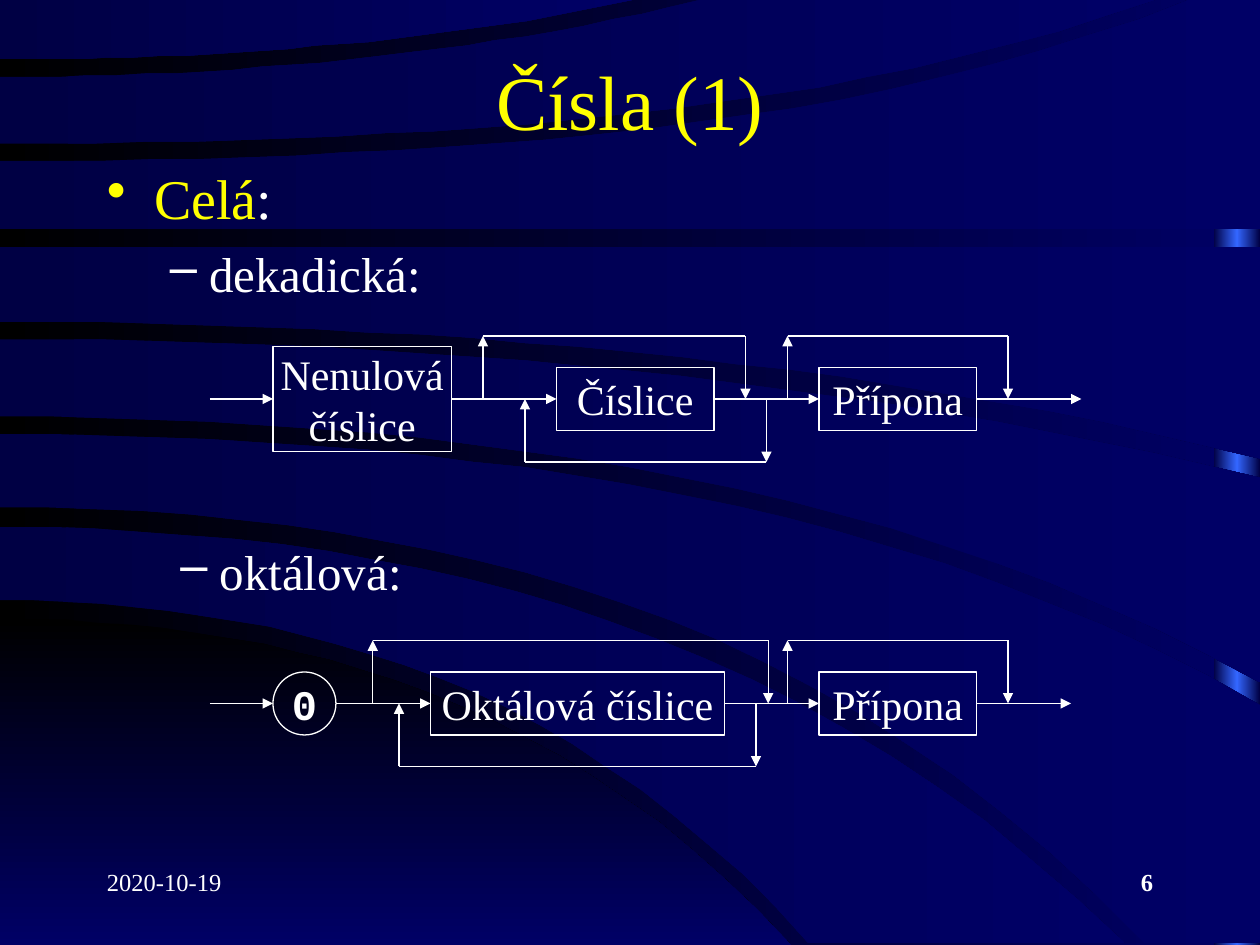
from copy import deepcopy
from typing import NamedTuple, Optional

from lxml.etree import SubElement
from pptx import Presentation
from pptx.dml.color import RGBColor
from pptx.enum.shapes import MSO_CONNECTOR, MSO_SHAPE
from pptx.enum.text import MSO_ANCHOR, PP_ALIGN
from pptx.oxml.ns import qn
from pptx.util import Pt

COLORS = {"text": "FFFFFF", "accent": "FFFF00", "black": "000000",
          "navy": "000066", "dark": "000044", "glow": "3366FF"}
SERIF = "Times New Roman"
DETOUR_HEIGHT = 36
CURVE_STEPS = 24


class Run(NamedTuple):
    text: str
    size: float
    color: str = "text"
    bold: bool = False
    font: str = SERIF


class Line(NamedTuple):
    runs: list
    align: PP_ALIGN = PP_ALIGN.LEFT
    bullet: str = ""
    margin: float = 0
    hanging: float = 0
    space_before: float = 0


class TextBox(NamedTuple):
    left: float
    top: float
    width: float
    height: float
    lines: list
    anchor: MSO_ANCHOR = MSO_ANCHOR.TOP


class Node(NamedTuple):
    label: str
    left: float
    width: float
    height: float = 36
    kind: MSO_SHAPE = MSO_SHAPE.RECTANGLE
    bold: bool = False
    font: str = SERIF


class Detour(NamedTuple):
    start: float
    end: float
    direction: int


class Diagram(NamedTuple):
    baseline: float
    start: float
    end: float
    nodes: list
    detours: list


class Edge(NamedTuple):
    start_y: float
    middle_y: float
    end_y: float
    end_x: float = 720


class Band(NamedTuple):
    upper: Edge
    lower: Edge
    corners: tuple = ()
    colors: tuple = ("dark", "navy")
    angle: float = 0


BANDS = [
    Band(Edge(353.5, 389, 540, 452), Edge(540, 540, 540, 452),
         colors=("black", "navy"), angle=270),
    Band(Edge(301, 346, 539, 643), Edge(343, 380, 539, 462)),
    Band(Edge(248, 277, 403), Edge(290, 335, 539, 654), ((720, 539),)),
    Band(Edge(194, 212, 273), Edge(238, 267, 390)),
    Band(Edge(141, 141, 141), Edge(184, 201, 262)),
    Band(Edge(92, 77, 0, 679), Edge(131, 131, 131), ((720, 0),)),
    Band(Edge(44, 34, 0, 400), Edge(82, 68, 0, 660)),
    Band(Edge(0, 0, 0, 361), Edge(34, 26.5, 0, 361)),
]

SUBITEM = {"bullet": "–", "margin": 58.5, "hanging": 22.5}
TEXT_BOXES = [
    TextBox(54, 492, 150, 36, [Line([Run("2020-10-19", 14)])]),
    TextBox(516, 492, 150, 36, [Line([Run("6", 14, bold=True)], PP_ALIGN.RIGHT)]),
    TextBox(54, 24, 612, 66, [Line([Run("Čísla (1)", 44, "accent")], PP_ALIGN.CENTER)],
            MSO_ANCHOR.MIDDLE),
    TextBox(54, 90, 612, 78, [
        Line([Run("Celá", 32, "accent"), Run(":", 32)], bullet="•", margin=27, hanging=27,
             space_before=3),
        Line([Run("dekadická:", 28)], space_before=7, **SUBITEM)]),
    TextBox(60, 306, 612, 48, [Line([Run("oktálová:", 28)], space_before=3, **SUBITEM)]),
]

SUFFIX = Node("Přípona", 468, 90)
SKIP_SUFFIX = Detour(450, 576, -1)
DIAGRAMS = [
    Diagram(228, 120, 618,
            [Node("Nenulová\nčíslice", 156, 102, 60), Node("Číslice", 318, 90), SUFFIX],
            [Detour(276, 426, -1), Detour(438, 300, 1), SKIP_SUFFIX]),
    Diagram(402, 120, 612,
            [Node("0", 156, 36, kind=MSO_SHAPE.OVAL, bold=True, font="Courier New"),
             Node("Oktálová číslice", 246, 168), SUFFIX],
            [Detour(213, 439, -1), Detour(432, 228, 1), SKIP_SUFFIX]),
]


def set_all(target, values: dict) -> None:
    for name, value in values.items():
        setattr(target, name, value)


def rgb(name: str) -> RGBColor:
    return RGBColor.from_string(COLORS[name])


def apply_gradient(fill, colors: tuple, angle: float = 0) -> None:
    fill.gradient_angle = angle
    for index, (stop, color) in enumerate(zip(fill.gradient_stops, colors)):
        stop.position = index / (len(colors) - 1)
        stop.color.rgb = rgb(color)


def format_run(run, style: Run) -> None:
    set_all(run.font, {"name": style.font, "size": Pt(style.size), "bold": style.bold})
    run.font.color.rgb = rgb(style.color)


def edge_points(edge: Edge) -> list:
    drop = edge.end_y - edge.start_y
    square = (16 * (edge.middle_y - edge.start_y) - drop) / 3
    ratios = [step / CURVE_STEPS for step in range(CURVE_STEPS + 1)]
    return [(edge.end_x * ratio,
             edge.start_y + square * ratio ** 2 + (drop - square) * ratio ** 4)
            for ratio in ratios]


def draw_background(slide) -> None:
    background = slide.background.fill
    background.gradient()
    apply_gradient(background, ("black", "navy"))
    strip = slide.shapes.add_shape(MSO_SHAPE.RECTANGLE, Pt(693.5), Pt(0), Pt(26.5), Pt(540))
    strip.shadow.inherit = False
    strip.line.fill.background()
    strip.fill.gradient()
    stops = strip.element.spPr.find(".//" + qn("a:gsLst"))
    stops.insert(1, deepcopy(stops[0]))
    apply_gradient(strip.fill, ("dark", "glow", "dark"))
    for band in BANDS:
        points = edge_points(band.upper) + list(band.corners) + edge_points(band.lower)[::-1]
        builder = slide.shapes.build_freeform(*points[0], scale=Pt(1))
        builder.add_line_segments(points[1:], close=True)
        shape = builder.convert_to_shape()
        shape.shadow.inherit = False
        shape.line.fill.background()
        shape.fill.gradient()
        apply_gradient(shape.fill, band.colors, band.angle)


def draw_text_box(slide, box: TextBox) -> None:
    shape = slide.shapes.add_textbox(Pt(box.left), Pt(box.top), Pt(box.width), Pt(box.height))
    frame = shape.text_frame
    set_all(frame, {"word_wrap": True, "vertical_anchor": box.anchor})
    for index, line in enumerate(box.lines):
        paragraph = frame.add_paragraph() if index else frame.paragraphs[0]
        set_all(paragraph, {"alignment": line.align, "space_before": Pt(line.space_before)})
        if line.bullet:
            properties = paragraph._p.get_or_add_pPr()
            properties.set("marL", str(Pt(line.margin)))
            properties.set("indent", str(-Pt(line.hanging)))
            SubElement(properties, qn("a:buChar")).set("char", line.bullet)
        for style in line.runs:
            run = paragraph.add_run()
            run.text = style.text
            format_run(run, style)


def draw_node(slide, node: Node, baseline: float):
    shape = slide.shapes.add_shape(node.kind, Pt(node.left), Pt(baseline - node.height / 2),
                                   Pt(node.width), Pt(node.height))
    shape.shadow.inherit = False
    shape.fill.background()
    shape.line.color.rgb = rgb("text")
    shape.line.width = Pt(0.75)
    set_all(shape.text_frame, {"word_wrap": False, "vertical_anchor": MSO_ANCHOR.MIDDLE})
    paragraph = shape.text_frame.paragraphs[0]
    set_all(paragraph, {"text": node.label.replace("\n", "\v"), "alignment": PP_ALIGN.CENTER})
    for run in paragraph.runs:
        format_run(run, Run(run.text, 24, bold=node.bold, font=node.font))
    return shape


def draw_line(slide, start: tuple, end: tuple, arrow: bool = True,
              source: Optional[object] = None, target: Optional[object] = None) -> None:
    connector = slide.shapes.add_connector(MSO_CONNECTOR.STRAIGHT, *map(Pt, start + end))
    connector.line.color.rgb = rgb("text")
    connector.line.width = Pt(0.75)
    if arrow:
        SubElement(connector.get_or_add_ln(), qn("a:tailEnd")).set("type", "triangle")
    SubElement(connector._element.spPr, qn("a:effectLst"))
    if source is not None and source.auto_shape_type == MSO_SHAPE.RECTANGLE:
        connector.begin_connect(source, 3)
    if target is not None and target.auto_shape_type == MSO_SHAPE.RECTANGLE:
        connector.end_connect(target, 1)


def draw_diagram(slide, diagram: Diagram) -> None:
    level = diagram.baseline
    shapes = [draw_node(slide, node, level) for node in diagram.nodes]
    starts = [diagram.start] + [node.left + node.width for node in diagram.nodes]
    ends = [node.left for node in diagram.nodes] + [diagram.end]
    for start, end, source, target in zip(starts, ends, [None] + shapes, shapes + [None]):
        draw_line(slide, (start, level), (end, level), source=source, target=target)
    for detour in diagram.detours:
        side = level + detour.direction * DETOUR_HEIGHT
        draw_line(slide, (detour.start, level), (detour.start, side))
        draw_line(slide, (detour.start, side), (detour.end, side), arrow=False)
        draw_line(slide, (detour.end, side), (detour.end, level))


presentation = Presentation()
set_all(presentation, {"slide_width": Pt(720), "slide_height": Pt(540)})
main_slide = presentation.slides.add_slide(presentation.slide_layouts[6])
draw_background(main_slide)
for text_box in TEXT_BOXES:
    draw_text_box(main_slide, text_box)
for syntax_diagram in DIAGRAMS:
    draw_diagram(main_slide, syntax_diagram)
presentation.save("out.pptx")
